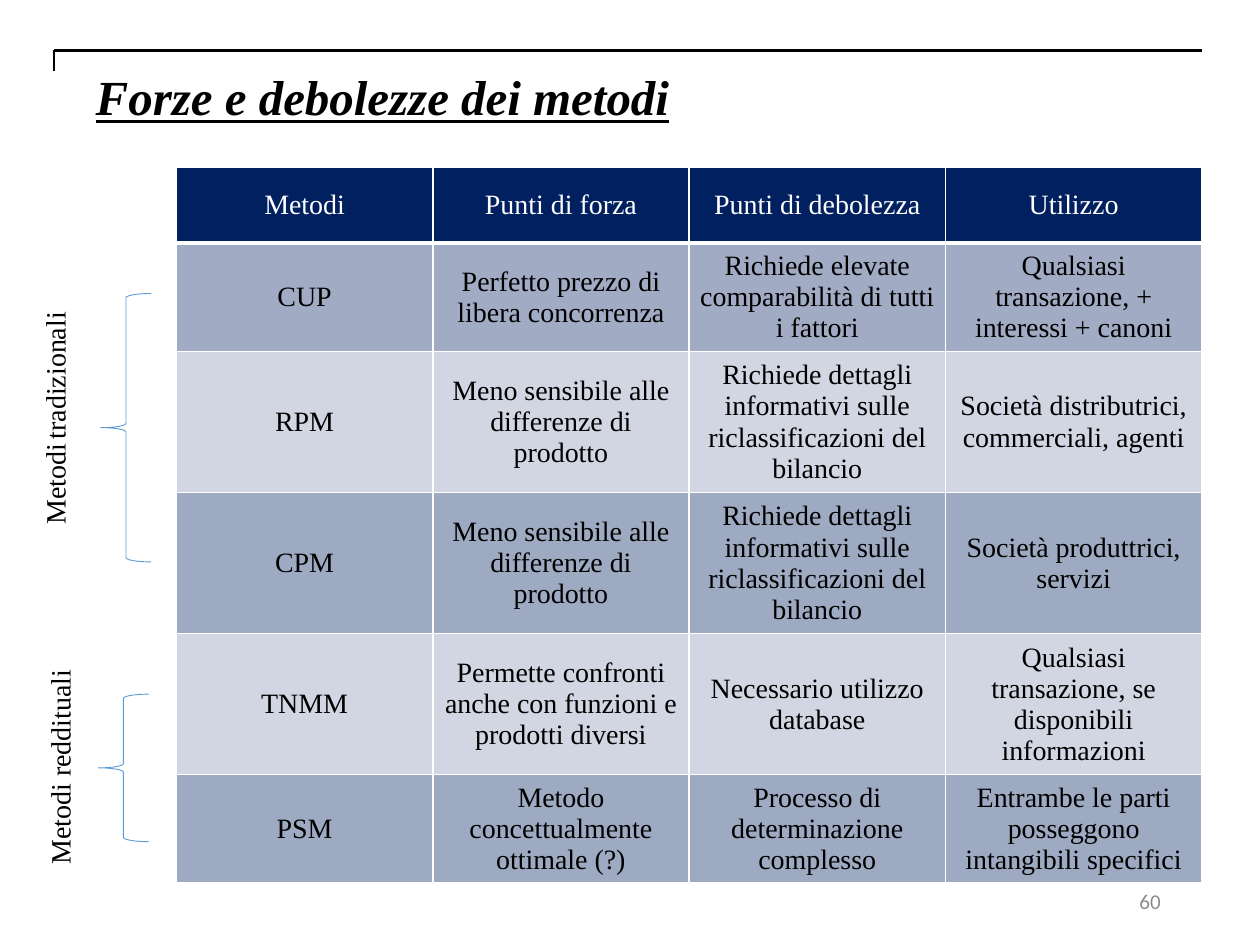
"""Build a slide comparing the strengths and weaknesses of pricing methods."""
from lxml import etree
from pptx import Presentation
from pptx import util as u
from pptx.dml.color import RGBColor
from pptx.enum import shapes, text
from pptx.oxml import ns

NAVY = RGBColor(0x00, 0x20, 0x60)
BLUE = RGBColor(0x5B, 0x9B, 0xD5)
BLACK = RGBColor(0x00, 0x00, 0x00)
WHITE = RGBColor(0xFF, 0xFF, 0xFF)
GRAY = RGBColor(0x8C, 0x8C, 0x8C)
SERIF = "Times New Roman"
ALIGN = text.PP_ALIGN
MIDDLE = text.MSO_ANCHOR.MIDDLE

ROWS = [
    ("Metodi", "Punti di forza", "Punti di debolezza", "Utilizzo"),
    ("CUP", "Perfetto prezzo di libera concorrenza",
     "Richiede elevate comparabilità di tutti i fattori",
     "Qualsiasi transazione, + interessi + canoni"),
    ("RPM", "Meno sensibile alle differenze di prodotto",
     "Richiede dettagli informativi sulle riclassificazioni del bilancio",
     "Società distributrici, commerciali, agenti"),
    ("CPM", "Meno sensibile alle differenze di prodotto",
     "Richiede dettagli informativi sulle riclassificazioni del bilancio",
     "Società produttrici, servizi"),
    ("TNMM", "Permette confronti anche con funzioni e prodotti diversi",
     "Necessario utilizzo database",
     "Qualsiasi transazione, se disponibili informazioni"),
    ("PSM", "Metodo concettualmente ottimale (?)",
     "Processo di determinazione complesso",
     "Entrambe le parti posseggono intangibili specifici"),
]
HEIGHTS = (0.6, 0.86, 1.12, 1.12, 1.12, 0.86)
ALPHAS = (100, 37, 18, 38, 18, 38)


def inches(*nums):
    return [u.Inches(n) for n in nums]


def write(para, words, size=16, font=SERIF, color=BLACK, align=ALIGN.LEFT,
          bold=False, italic=False, under=False):
    para.alignment = align
    run = para.add_run()
    run.text = words
    face = run.font
    face.size, face.name = u.Pt(size), font
    face.bold, face.italic, face.underline = bold, italic, under
    face.color.rgb = color


class Deck:
    def __init__(self):
        self.prs = Presentation()
        self.prs.slide_width, self.prs.slide_height = inches(10, 7.5)
        self.slide = self.prs.slides.add_slide(self.prs.slide_layouts[5])
        self.shapes = self.slide.shapes

    def title(self, words, box):
        head = self.shapes.title
        head.left, head.top, head.width, head.height = inches(*box)
        frame = head.text_frame
        frame.auto_size = text.MSO_AUTO_SIZE.NONE
        frame.vertical_anchor = text.MSO_ANCHOR.TOP
        write(frame.paragraphs[0], words, size=28,
              bold=True, italic=True, under=True)

    def label(self, parts, box, turn=False, anchor=text.MSO_ANCHOR.TOP):
        frame = self.shapes.add_textbox(*inches(*box)).text_frame
        frame.word_wrap = True
        frame.vertical_anchor = anchor
        if turn:
            frame._txBody.bodyPr.set("vert", "vert270")
        for words, style in parts:
            write(frame.paragraphs[0], words, **style)

    def brace(self, box):
        shape = self.shapes.add_shape(
            shapes.MSO_SHAPE.LEFT_BRACE, *inches(*box))
        shape.shadow.inherit = False
        shape.fill.background()
        shape.line.color.rgb = BLUE
        shape.line.width = u.Pt(0.5)

    def rule(self, *ends):
        line = self.shapes.add_connector(
            shapes.MSO_CONNECTOR.STRAIGHT, *inches(*ends))
        line.line.color.rgb = BLACK
        line.line.width = u.Pt(1.5)
        etree.SubElement(line._element.spPr, ns.qn("a:effectLst"))

    def border(self, cell, head):
        props = cell._tc.get_or_add_tcPr()
        for spot, side in enumerate("LRTB"):
            wide = 3 if head and side == "B" else 1
            edge = etree.Element(ns.qn("a:ln" + side), w=str(u.Pt(wide)))
            fill = etree.SubElement(edge, ns.qn("a:solidFill"))
            etree.SubElement(fill, ns.qn("a:srgbClr"), val=str(WHITE))
            props.insert(spot, edge)

    def cell(self, cell, words, alpha):
        head = alpha == 100
        cell.vertical_anchor = MIDDLE
        cell.margin_left = cell.margin_right = u.Inches(0.07)
        cell.margin_top = cell.margin_bottom = u.Inches(0.04)
        cell.fill.solid()
        cell.fill.fore_color.rgb = NAVY
        if not head:
            tint = cell._tc.tcPr.find(".//" + ns.qn("a:srgbClr"))
            etree.SubElement(tint, ns.qn("a:alpha"), val=str(alpha * 1000))
        self.border(cell, head)
        write(cell.text_frame.paragraphs[0], words, align=ALIGN.CENTER,
              color=WHITE if head else BLACK)

    def table(self, rows, heights, alphas, box):
        grid = self.shapes.add_table(
            len(rows), len(rows[0]), *inches(*box)).table
        for row, words, high, alpha in zip(grid.rows, rows, heights, alphas):
            row.height = u.Inches(high)
            for cell, item in zip(row.cells, words):
                self.cell(cell, item, alpha)


def main():
    deck = Deck()
    deck.table(ROWS, HEIGHTS, ALPHAS, (1.4, 1.33, 8.14, sum(HEIGHTS)))
    deck.brace((0.8, 2.33, 0.4, 2.13))
    deck.brace((0.78, 5.51, 0.4, 1.17))
    deck.label([("Metodi reddituali", {})], (0.29, 5.03, 0.47, 1.93), turn=True)
    deck.label([("Metodi", {}), (" ", {"size": 11, "font": "Calibri"}),
                ("tradizionali", {})], (0.25, 2.06, 0.47, 2.2), turn=True)
    deck.title("Forze e debolezze dei metodi", (0.66, 0.48, 8.88, 0.57))
    deck.rule(0.43, 0.4, 9.54, 0.4)
    deck.rule(0.43, 0.4, 0.43, 0.56)
    page = {"size": 12, "font": "Calibri", "color": GRAY, "align": ALIGN.RIGHT}
    deck.label([("60", page)], (7.06, 6.95, 2.25, 0.4), anchor=MIDDLE)
    deck.prs.save("out.pptx")


if __name__ == "__main__":
    main()
